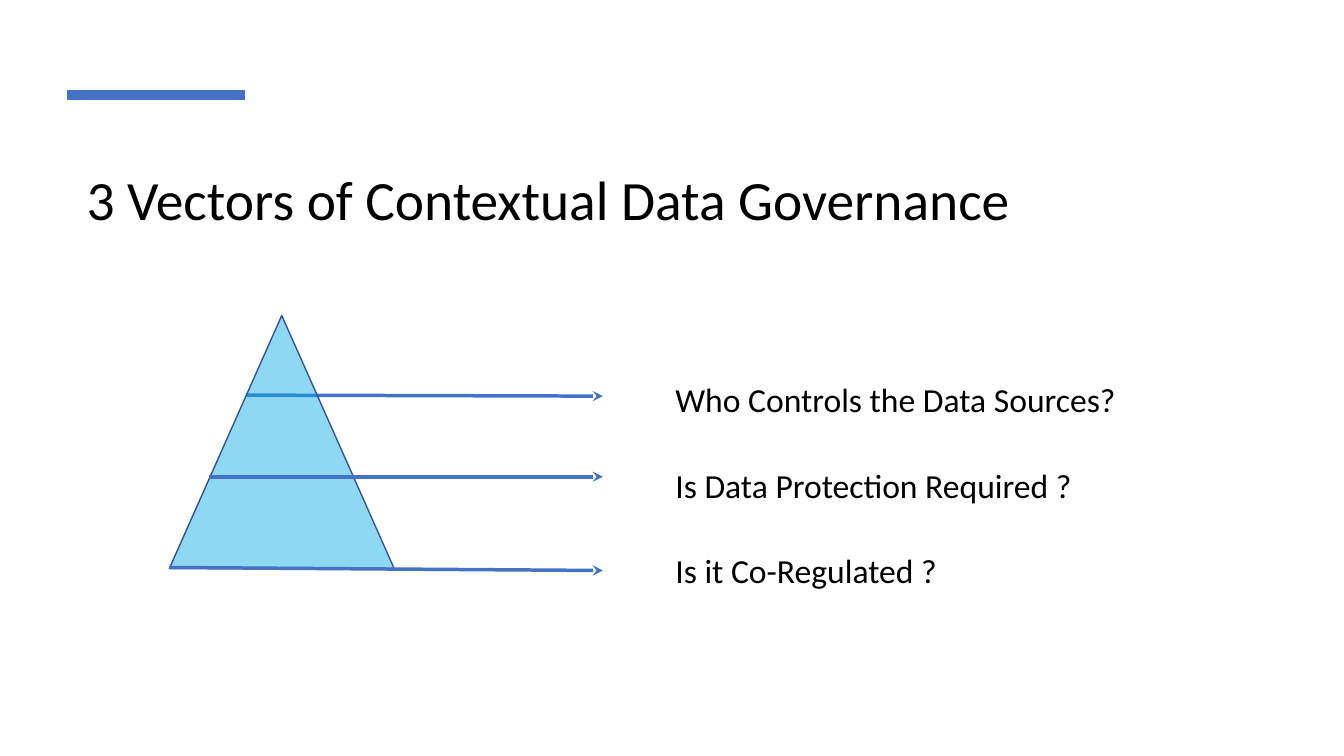
from dataclasses import dataclass

from lxml import etree
from pptx import Presentation
from pptx.dml.color import RGBColor
from pptx.enum.shapes import MSO_CONNECTOR as CONN, MSO_SHAPE as SHAPE
from pptx.enum.text import MSO_ANCHOR as ANCHOR, PP_ALIGN as ALIGN
from pptx.oxml.ns import qn
from pptx.util import Inches, Pt


@dataclass(frozen=True)
class Theme:
    font: str = "Calibri"
    text: str = "000000"
    accent: str = "4472C4"
    pyramid: str = "09ABE5"
    outline: str = "325491"
    title_size: float = 39.6
    body_size: float = 24
    arrow_width: float = 2.5


class SlideBuilder:
    def __init__(self, slide, theme):
        self.s = slide
        self.theme = theme

    def shape(self, kind, box, fill, line, width, opacity=None):
        """Add a filled preset shape; opacity is a percentage."""
        sp = self.s.shapes.add_shape(kind, *map(Inches, box))
        sp.shadow.inherit = False
        sp.fill.solid()
        sp.fill.fore_color.rgb = RGBColor.from_string(fill)
        sp.line.color.rgb = RGBColor.from_string(line)
        sp.line.width = Pt(width)
        if opacity is not None:
            color = sp.fill._xPr.find(qn("a:solidFill"))[0]
            etree.SubElement(color, qn("a:alpha")).set("val", str(opacity * 1000))

    def arrow(self, start, end):
        cn = self.s.shapes.add_connector(CONN.STRAIGHT, *map(Inches, start + end))
        cn.line.color.rgb = RGBColor.from_string(self.theme.accent)
        cn.line.width = Pt(self.theme.arrow_width)
        etree.SubElement(cn.line._get_or_add_ln(), qn("a:tailEnd")).set("type", "stealth")
        etree.SubElement(cn._element.spPr, qn("a:effectLst"))

    def text(self, box, text, size, spacing=None, inset=None):
        tf = self.s.shapes.add_textbox(*map(Inches, box)).text_frame
        tf.word_wrap = True
        tf.vertical_anchor = ANCHOR.TOP
        if inset is not None:
            tf.margin_left = tf.margin_right = Inches(inset)
            tf.margin_top = tf.margin_bottom = Inches(inset)
        tf.text = text
        p = tf.paragraphs[0]
        p.alignment = ALIGN.LEFT
        if spacing is not None:
            p.line_spacing = spacing
        r = p.runs[0]
        r.font.name = self.theme.font
        r.font.size = Pt(size)
        r.font.color.rgb = RGBColor.from_string(self.theme.text)


def main():
    prs = Presentation()
    prs.slide_width, prs.slide_height = Inches(13.33), Inches(7.5)
    theme = Theme()
    b = SlideBuilder(prs.slides.add_slide(prs.slide_layouts[6]), theme)

    b.shape(SHAPE.RECTANGLE, (0.67, 0.9, 1.76, 0.09), theme.accent, theme.accent, 0.75)
    b.text((0.86, 1.71, 12, 0.54), "3 Vectors of Contextual Data Governance",
           theme.title_size, spacing=0.9, inset=0)

    # The top arrow lies behind the translucent pyramid, the others in front.
    arrow_tip, label_left = 5.98, 6.6
    b.arrow((2.44, 3.92), (arrow_tip, 3.93))
    b.shape(SHAPE.ISOSCELES_TRIANGLE, (1.68, 3.13, 2.23, 2.51),
            theme.pyramid, theme.outline, 1, opacity=46)
    b.arrow((2.07, 4.73), (arrow_tip, 4.73))
    b.arrow((1.68, 5.63), (arrow_tip, 5.66))

    questions = ("Who Controls the Data Sources?",
                 "Is Data Protection Required ?",
                 "Is it Co-Regulated ?")
    for i, question in enumerate(questions):
        b.text((label_left, 3.71 + 0.85 * i, 5.2, 0.5), question, theme.body_size)

    prs.save("out.pptx")


if __name__ == "__main__":
    main()
